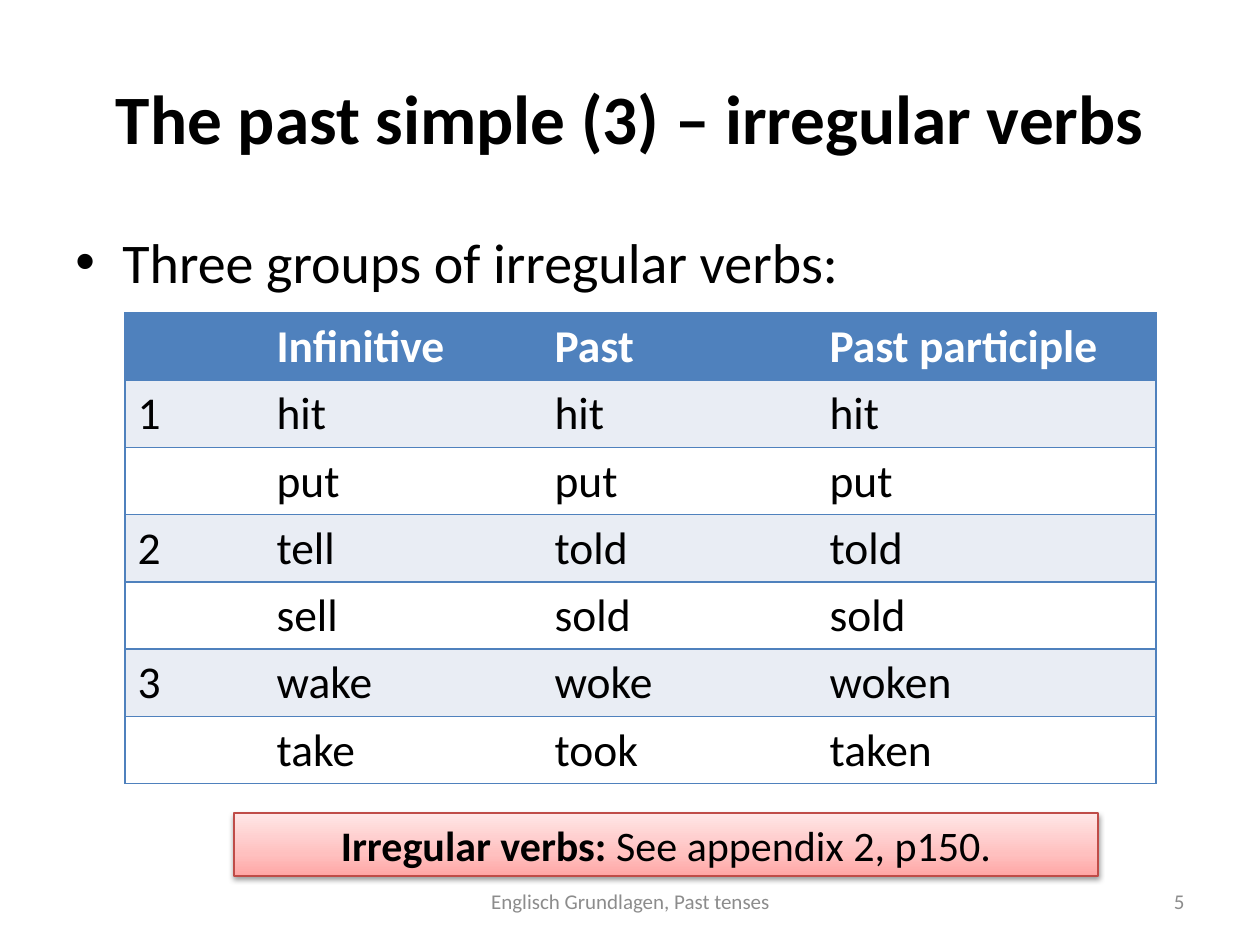
from copy import deepcopy

from lxml.etree import SubElement
from pptx import Presentation
from pptx.dml.color import RGBColor
from pptx.enum.shapes import MSO_SHAPE
from pptx.enum.text import MSO_ANCHOR as Anchor, PP_ALIGN as Align
from pptx.oxml.ns import qn
from pptx.util import Pt

PX = 914400 / 126
COLORS = {
    "text": "000000", "white": "FFFFFF", "muted": "8C8C8C",
    "accent": "4F81BD", "band": "E9EDF4", "note_line": "BF4C48",
}
NOTE_GRADIENT = [(0, "FFA6A5"), (0.35, "FFC0BF"), (1, "FFE7E7")]
COLUMNS = [139, 278, 275, 339]
ROW_HEIGHT = 67
VERBS = [
    ["", "Infinitive", "Past", "Past participle"],
    ["1", "hit", "hit", "hit"],
    ["", "put", "put", "put"],
    ["2", "tell", "told", "told"],
    ["", "sell", "sold", "sold"],
    ["3", "wake", "woke", "woken"],
    ["", "take", "took", "taken"],
]


def px(*lengths):
    return [round(length * PX) for length in lengths]


def rgb(name):
    return RGBColor.from_string(COLORS[name])


class SlideBuilder:
    def __init__(self, slide, font="Calibri"):
        self.slide = slide
        self.font = font

    def runs(self, paragraph, parts, size, color):
        """Add (text, bold) parts to the paragraph as runs."""
        for text, bold in parts:
            run = paragraph.add_run()
            run.text = text
            run.font.name = self.font
            run.font.size = Pt(size)
            run.font.bold = bold
            run.font.color.rgb = rgb(color)

    def text(self, box, parts, size, color="text", align=Align.LEFT,
             anchor=Anchor.MIDDLE, bullet_indent=0):
        frame = self.slide.shapes.add_textbox(*px(*box)).text_frame
        frame.word_wrap = True
        frame.vertical_anchor = anchor
        paragraph = frame.paragraphs[0]
        paragraph.alignment = align
        if bullet_indent:
            properties = paragraph._p.get_or_add_pPr()
            indent, = px(bullet_indent)
            properties.set("marL", str(indent))
            properties.set("indent", str(-indent))
            SubElement(properties, qn("a:buFont"), typeface="Arial")
            SubElement(properties, qn("a:buChar"), char="•")
        self.runs(paragraph, parts, size, color)

    def border(self, cell, side, visible):
        line = SubElement(cell._tc.get_or_add_tcPr(), qn(f"a:ln{side}"), w=str(Pt(1)))
        if visible:
            fill = SubElement(line, qn("a:solidFill"))
            SubElement(fill, qn("a:srgbClr"), val=COLORS["accent"])
        else:
            SubElement(line, qn("a:noFill"))

    def table(self, left, top, columns, row_height, rows, size):
        box = px(left, top, sum(columns), row_height * len(rows))
        table = self.slide.shapes.add_table(len(rows), len(columns), *box).table
        for column, width in zip(table.columns, px(*columns)):
            column.width = width
        for row_index, row in enumerate(rows):
            header = row_index == 0
            fill = "accent" if header else "band" if row_index % 2 else "white"
            for column_index, text in enumerate(row):
                cell = table.cell(row_index, column_index)
                outer = {"L": column_index == 0,
                         "R": column_index == len(columns) - 1}
                for side in "LRTB":
                    self.border(cell, side, outer.get(side, True))
                cell.fill.solid()
                cell.fill.fore_color.rgb = rgb(fill)
                if text:
                    self.runs(cell.text_frame.paragraphs[0], [(text, header)],
                              size, "white" if header else "text")

    def note(self, box, parts, size, gradient):
        """Add a gradient rectangle with a soft shadow and centred text."""
        shape = self.slide.shapes.add_shape(MSO_SHAPE.RECTANGLE, *px(*box))
        shape.line.color.rgb = rgb("note_line")
        shape.line.width = Pt(0.75)
        shape.fill.gradient()
        shape.fill.gradient_angle = 90
        properties = shape._element.spPr
        stop_list = properties.find(".//" + qn("a:gsLst"))
        stop_list.append(deepcopy(stop_list[0]))
        for stop, (position, color) in zip(shape.fill.gradient_stops, gradient):
            stop.position = position
            stop.color.rgb = RGBColor.from_string(color)
        shape.shadow.inherit = False
        shadow = SubElement(properties.find(qn("a:effectLst")), qn("a:outerShdw"),
                            blurRad="40000", dist="20000", dir="5400000", rotWithShape="0")
        shadow_color = SubElement(shadow, qn("a:srgbClr"), val=COLORS["text"])
        SubElement(shadow_color, qn("a:alpha"), val="38000")
        frame = shape.text_frame
        frame.word_wrap = True
        frame.vertical_anchor = Anchor.TOP
        frame.paragraphs[0].alignment = Align.CENTER
        self.runs(frame.paragraphs[0], parts, size, "text")


def main():
    presentation = Presentation()
    presentation.slide_width, presentation.slide_height = px(1260, 945)
    slide = presentation.slides.add_slide(presentation.slide_layouts[6])
    builder = SlideBuilder(slide)

    builder.text((63, 38, 1134, 158), [("The past simple (3) – irregular verbs", True)],
                 39.6, align=Align.CENTER)
    builder.text((63, 221, 1134, 132), [("Three groups of irregular verbs:", False)],
                 32, anchor=Anchor.TOP, bullet_indent=47)
    builder.table(125, 313, COLUMNS, ROW_HEIGHT, VERBS, 26)
    builder.note((234, 813, 864, 63),
                 [("Irregular verbs: ", True), ("See appendix 2, p150.", False)],
                 24, NOTE_GRADIENT)
    builder.text((903, 876, 294, 50), [("5", False)], 12, "muted", Align.RIGHT)
    builder.text((431, 876, 399, 50), [("Englisch Grundlagen, Past tenses", False)],
                 12, "muted", Align.CENTER)
    presentation.save("out.pptx")


if __name__ == "__main__":
    main()
